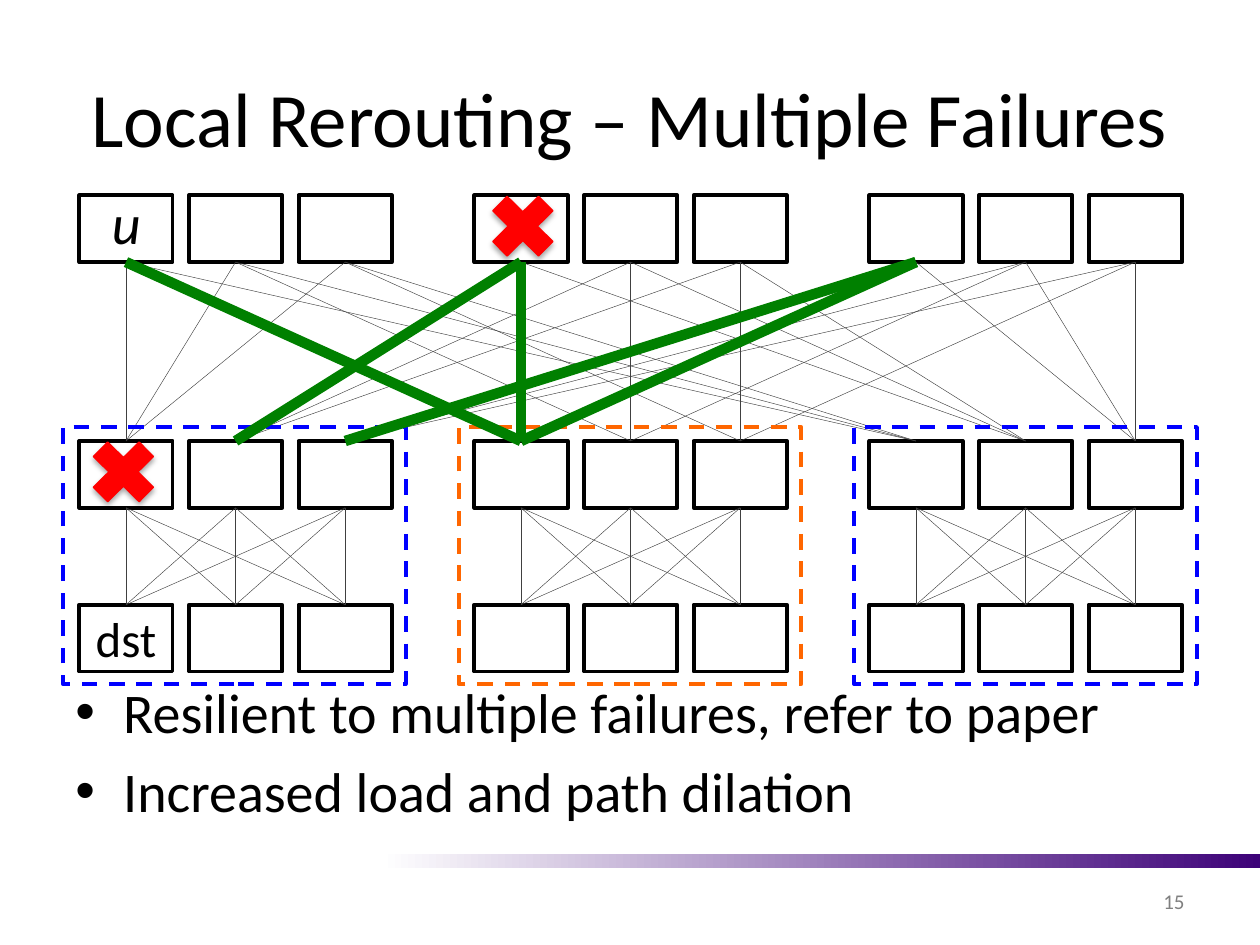
from lxml import etree
from pptx import Presentation
from pptx.dml.color import RGBColor
from pptx.enum.dml import MSO_LINE
from pptx.enum.shapes import MSO_CONNECTOR, MSO_SHAPE
from pptx.enum.text import MSO_ANCHOR, MSO_AUTO_SIZE, PP_ALIGN
from pptx.oxml import parse_xml
from pptx.oxml.ns import qn
from pptx.util import Inches, Pt

NS = 'xmlns:a="http://schemas.openxmlformats.org/drawingml/2006/main"'


def paint(color, code):
    color.rgb = RGBColor.from_string(code)


def link(start, a, end, b, code, width):
    wire = slide.shapes.add_connector(MSO_CONNECTOR.STRAIGHT, 0, 0, 0, 0)
    wire.begin_connect(start, a)
    wire.end_connect(end, b)
    paint(wire.line.color, code)
    wire.line.width = Pt(width)
    etree.SubElement(wire._element.spPr, qn("a:effectLst"))


deck = Presentation()
deck.slide_width, deck.slide_height = Inches(10), Inches(7.5)
slide = deck.slides.add_slide(deck.slide_layouts[5])
shapes = slide.shapes

bar = shapes.add_shape(MSO_SHAPE.RECTANGLE, Inches(1.79), Inches(6.78), Inches(8.21), Inches(0.11))
bar.shadow.inherit = False
bar.line.fill.background()
bar.fill.gradient()
bar.fill.gradient_angle = 0
for stop, (spot, code) in zip(bar.fill.gradient_stops, [(0.15, "FFFFFF"), (1, "3D0278")]):
    stop.position = spot
    paint(stop.color, code)

title = shapes.title
title.left, title.top, title.width, title.height = Inches(0.5), Inches(0.3), Inches(9), Inches(1.25)
title.text_frame.text = "Local Rerouting – Multiple Failures"
title.text_frame.vertical_anchor = MSO_ANCHOR.MIDDLE

number = shapes.add_textbox(Inches(7.17), Inches(6.95), Inches(2.33), Inches(0.4))
number.text_frame.text = "15"
number.text_frame.vertical_anchor = MSO_ANCHOR.MIDDLE

body = shapes.add_textbox(Inches(0.5), Inches(5.33), Inches(9), Inches(1.37))
body.text_frame.word_wrap = True
body.text_frame.text = "Resilient to multiple failures, refer to paper\nIncreased load and path dilation"
for para in body.text_frame.paragraphs:
    para.space_before = Pt(6.4)
    props = para._p.get_or_add_pPr()
    props.set("marL", str(Inches(0.38)))
    props.set("indent", str(-Inches(0.38)))
    props.append(parse_xml(f'<a:buFont {NS} typeface="Arial"/>'))
    props.append(parse_xml(f'<a:buChar {NS} char="•"/>'))

rows = []
for top in (1.55, 3.5, 4.8):
    row = []
    for i in range(9):
        left = 0.63 + 3.135 * (i // 3) + 0.87 * (i % 3)
        box = shapes.add_shape(MSO_SHAPE.RECTANGLE, Inches(left), Inches(top), Inches(0.74), Inches(0.53))
        box.shadow.inherit = False
        box.fill.solid()
        paint(box.fill.fore_color, "FFFFFF")
        paint(box.line.color, "000000")
        box.line.width = Pt(2.25)
        row.append(box)
    rows.append(row)
core, mid, edge = rows

dst = edge[0].text_frame
dst.text = "dst"
dst.margin_left = dst.margin_right = 0
dst.vertical_anchor = MSO_ANCHOR.MIDDLE

for i in range(9):
    pod, slot = divmod(i, 3)
    for j in range(3):
        link(mid[i], 2, edge[3 * pod + j], 0, "404040", 0.25)
        peer = slot + 3 * j if pod == 1 else 3 * slot + j
        link(core[peer], 2, mid[i], 0, "404040", 0.25)

for pod, code in enumerate(("0000FF", "FF6600", "0000FF")):
    frame = shapes.add_shape(MSO_SHAPE.RECTANGLE, Inches(0.5 + 3.14 * pod), Inches(3.39), Inches(2.72), Inches(2.04))
    frame.shadow.inherit = False
    frame.fill.background()
    paint(frame.line.color, code)
    frame.line.width = Pt(2.25)
    frame.line.dash_style = MSO_LINE.DASH

node = shapes.add_textbox(Inches(0.79), Inches(1.45), Inches(0.54), Inches(0.64))
node.text_frame.text = "u"
node.text_frame.word_wrap = False
node.text_frame.auto_size = MSO_AUTO_SIZE.SHAPE_TO_FIT_TEXT
node.text_frame.paragraphs[0].font.italic = True

for frame, size, code, align in (
    (title.text_frame, 44, "000000", PP_ALIGN.CENTER),
    (number.text_frame, 12, "808080", PP_ALIGN.RIGHT),
    (body.text_frame, 32, "000000", PP_ALIGN.LEFT),
    (dst, 28, "000000", PP_ALIGN.CENTER),
    (node.text_frame, 32, "000000", PP_ALIGN.LEFT),
):
    for para in frame.paragraphs:
        para.alignment = align
        para.font.name = "Calibri"
        para.font.size = Pt(size)
        paint(para.font.color, code)

for a, b in ((0, 3), (3, 3), (3, 1), (6, 3), (6, 2)):
    link(core[a], 2, mid[b], 0, "008000", 6)

for left, top in ((3.8, 1.45), (0.63, 3.4)):
    cross = shapes.add_shape(MSO_SHAPE.MATH_MULTIPLY, Inches(left), Inches(top), Inches(0.7), Inches(0.69))
    cross.fill.solid()
    paint(cross.fill.fore_color, "FF0000")
    paint(cross.line.color, "FF0000")
    cross.line.width = Pt(0.75)
    cross.shadow.inherit = False
    cross._element.spPr.find(qn("a:effectLst")).append(parse_xml(
        f'<a:outerShdw {NS} blurRad="{Pt(3.1)}" dist="{Pt(1.8)}" dir="5400000" rotWithShape="0">'
        '<a:srgbClr val="000000"><a:alpha val="35000"/></a:srgbClr></a:outerShdw>'))

deck.save("out.pptx")
